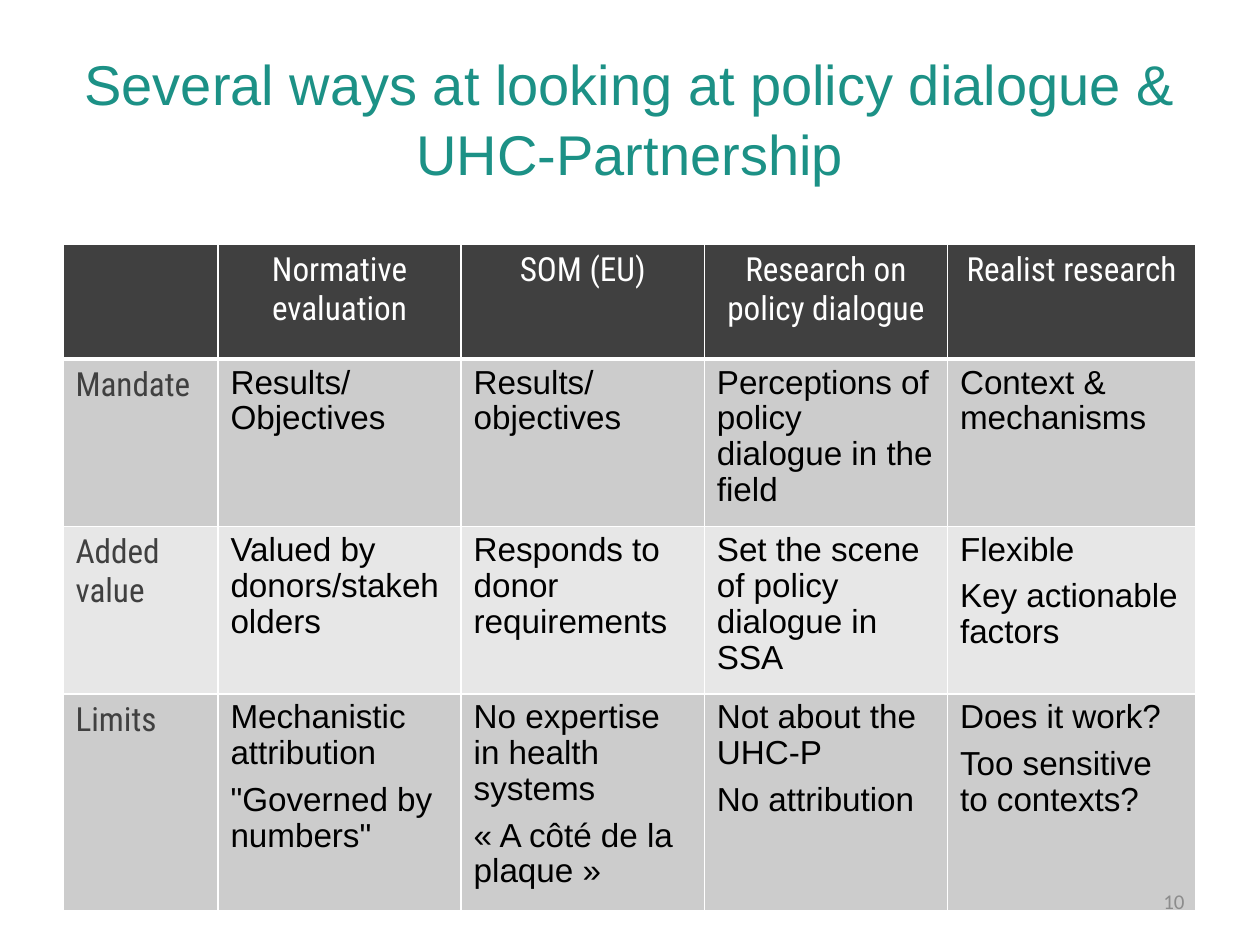
from lxml.etree import SubElement
from pptx import Presentation
from pptx.dml.color import RGBColor
from pptx.enum.text import MSO_ANCHOR, PP_ALIGN
from pptx.oxml.ns import qn
from pptx.util import Inches, Pt

TEAL = RGBColor(0x1C, 0x91, 0x86)
CHARCOAL = RGBColor(0x40, 0x40, 0x40)
GREY = RGBColor(0x8C, 0x8C, 0x8C)
BAND_DARK = RGBColor(0xCC, 0xCC, 0xCC)
BAND_LIGHT = RGBColor(0xE7, 0xE7, 0xE7)
WHITE = RGBColor(0xFF, 0xFF, 0xFF)
BLACK = RGBColor(0, 0, 0)

TITLE = {"name": "Arial", "size": Pt(32), "color": TEAL, "line_spacing": 1.04,
         "alignment": PP_ALIGN.CENTER}
NUMBER = {"name": "Calibri", "size": Pt(12), "color": GREY, "alignment": PP_ALIGN.RIGHT}
HEADER = {"name": "Roboto Condensed", "size": Pt(19), "color": WHITE,
          "alignment": PP_ALIGN.CENTER}
LABEL = HEADER | {"color": CHARCOAL, "alignment": PP_ALIGN.LEFT}
BODY = {"name": "Arial", "size": Pt(19), "color": BLACK, "line_spacing": 0.97}
LIST = BODY | {"space_after": Pt(6)}

COLUMN_WIDTHS = [1.23, 1.93, 1.93, 1.93, 1.97]
ROW_HEIGHTS = [0.91, 1.27, 1.31, 1.72]
APPROACHES = [
    ["", "Normative evaluation", "SOM (EU)", "Research on policy dialogue", "Realist research"],
    ["Mandate", "Results/Objectives", "Results/objectives",
     "Perceptions of policy dialogue in the field", "Context & mechanisms"],
    ["Added value", "Valued by donors/stakeholders", "Responds to donor requirements",
     "Set the scene of policy dialogue in SSA", "Flexible\nKey actionable factors"],
    ["Limits", "Mechanistic attribution\n\"Governed by numbers\"",
     "No expertise in health systems\n« A côté de la plaque »",
     "Not about the UHC-P\nNo attribution", "Does it work?\nToo sensitive to contexts?"],
]


class SlideBuilder:
    """Adds styled text and tables to the current slide."""

    def __init__(self, deck):
        self.page = deck.slides.add_slide(deck.slide_layouts[6])
        self.border_color = WHITE

    def fill_text(self, frame, text, style):
        frame.word_wrap = True
        for index, line in enumerate(text.split("\n")):
            para = frame.add_paragraph() if index else frame.paragraphs[0]
            span = para.add_run()
            span.text = line
            for key, value in style.items():
                if key == "color":
                    span.font.color.rgb = value
                else:
                    setattr(span.font if key in ("name", "size") else para, key, value)

    def text(self, left, top, width, height, text, style):
        box = self.page.shapes.add_textbox(*map(Inches, (left, top, width, height)))
        box.text_frame.vertical_anchor = MSO_ANCHOR.MIDDLE
        self.fill_text(box.text_frame, text, style)

    def cell(self, cell, text, style, fill, border_widths):
        if text:
            self.fill_text(cell.text_frame, text, style)
        properties = cell._tc.get_or_add_tcPr()
        for side, width in border_widths.items():
            line = SubElement(properties, qn(f"a:ln{side}"), w=str(Pt(width)))
            paint = SubElement(line, qn("a:solidFill"))
            SubElement(paint, qn("a:srgbClr"), val=str(self.border_color))
        cell.fill.solid()
        cell.fill.fore_color.rgb = fill

    def table(self, left, top, widths, heights, rows):
        size = map(Inches, (left, top, sum(widths), sum(heights)))
        table = self.page.shapes.add_table(len(heights), len(widths), *size).table
        for column, width in zip(table.columns, widths):
            column.width = Inches(width)
        for row, height in zip(table.rows, heights):
            row.height = Inches(height)
        for r, texts in enumerate(rows):
            fill = CHARCOAL if r == 0 else (BAND_LIGHT, BAND_DARK)[r % 2]
            borders = {"L": 1, "R": 1, "T": 3 if r == 1 else 1, "B": 3 if r == 0 else 1}
            for c, text in enumerate(texts):
                body = LIST if "\n" in text else BODY
                style = HEADER if r == 0 else LABEL if c == 0 else body
                self.cell(table.cell(r, c), text, style, fill, borders)


def main():
    deck = Presentation()
    deck.slide_width, deck.slide_height = Inches(10), Inches(7.5)
    builder = SlideBuilder(deck)
    builder.text(0.5, 0.3, 9, 1.25,
                 "Several ways at looking at policy dialogue & UHC-Partnership", TITLE)
    builder.table(0.5, 1.94, COLUMN_WIDTHS, ROW_HEIGHTS, APPROACHES)
    builder.text(7.17, 6.95, 2.33, 0.4, "10", NUMBER)
    deck.save("out.pptx")


if __name__ == "__main__":
    main()
